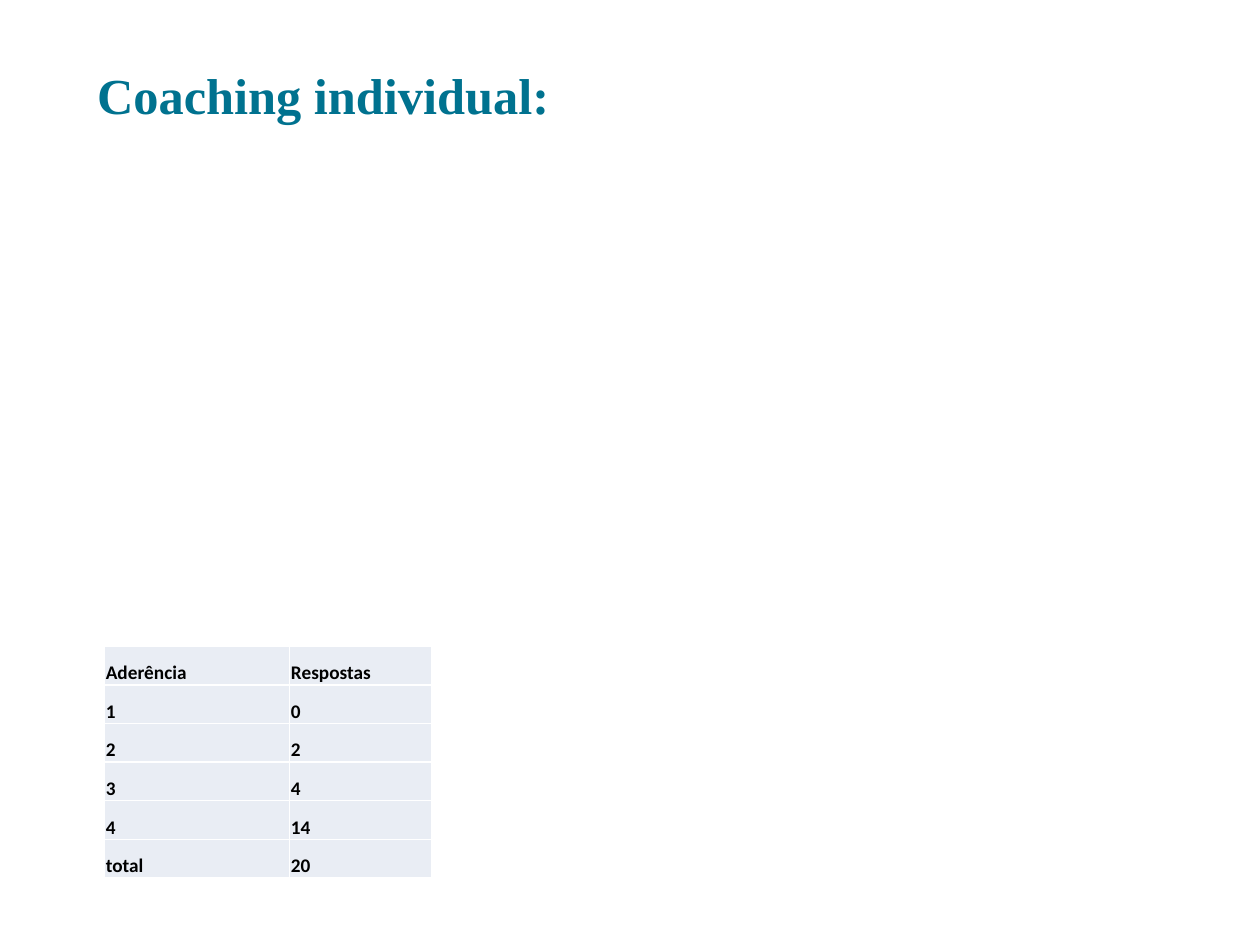
from dataclasses import dataclass

from lxml import etree
from pptx import Presentation
from pptx.dml.color import RGBColor as Color
from pptx.enum.text import MSO_ANCHOR as Anchor, PP_ALIGN as Align
from pptx.oxml import parse_xml
from pptx.oxml.ns import nsdecls, qn
from pptx.util import Inches, Pt


@dataclass(frozen=True)
class Theme:
    title_color: str = "00728F"
    text_color: str = "000000"
    cell_fill: str = "E9EDF4"
    border_color: str = "FFFFFF"
    title_font: str = "Times New Roman"
    table_font: str = "Calibri"
    title_size: float = 28.8
    table_size: float = 11


theme = Theme()


def write_text(frame, text, *, font, size, color, bold=True, align=Align.LEFT):
    para = frame.paragraphs[0]
    para.alignment = align
    span = para.add_run()
    span.text = text
    span.font.name = font
    span.font.size = Pt(size)
    span.font.bold = bold
    span.font.color.rgb = Color.from_string(color)
    return span


def add_borders(cell, color, width):
    properties = cell._tc.get_or_add_tcPr()
    for position, side in enumerate(("lnL", "lnR", "lnT", "lnB")):
        line = etree.Element(qn(f"a:{side}"), w=str(Pt(width)))
        fill = etree.SubElement(line, qn("a:solidFill"))
        etree.SubElement(fill, qn("a:srgbClr"), val=color)
        properties.insert(position, line)


deck = Presentation()
deck.slide_width, deck.slide_height = Inches(10), Inches(7.5)
page = deck.slides.add_slide(deck.slide_layouts[5])
page.background.fill.solid()
page.background.fill.fore_color.rgb = Color.from_string("FFFFFF")

# Title with a soft text shadow
title = page.shapes.title
title.left, title.top = Inches(0.67), Inches(0.52)
title.width, title.height = Inches(8.31), Inches(0.46)
title.text_frame.word_wrap = True
title.text_frame.vertical_anchor = Anchor.MIDDLE
span = write_text(title.text_frame, "Coaching individual:", font=theme.title_font,
                  size=theme.title_size, color=theme.title_color)
shadow = parse_xml(
    f'<a:effectLst {nsdecls("a")}>'
    '<a:outerShdw blurRad="50800" dist="38100" dir="5400000">'
    '<a:srgbClr val="000000"><a:alpha val="40000"/></a:srgbClr>'
    '</a:outerShdw></a:effectLst>')
span.font._element.find(qn("a:solidFill")).addnext(shadow)

# Table of answers by adherence level
answers = [
    ("Aderência", "Respostas"),
    ("1", "0"),
    ("2", "2"),
    ("3", "4"),
    ("4", "14"),
    ("total", "20"),
]
column_widths = [1.47, 1.13]
table = page.shapes.add_table(
    len(answers), len(column_widths), Inches(0.83), Inches(5.13),
    Inches(sum(column_widths)), Inches(1.84)).table
for column, width in zip(table.columns, column_widths):
    column.width = Inches(width)

for row_index, row in enumerate(answers):
    for column_index, text in enumerate(row):
        cell = table.cell(row_index, column_index)
        cell.vertical_anchor = Anchor.BOTTOM
        cell.margin_left = cell.margin_right = cell.margin_top = Inches(0.01)
        cell.margin_bottom = 0
        cell.fill.solid()
        cell.fill.fore_color.rgb = Color.from_string(theme.cell_fill)
        add_borders(cell, theme.border_color, 1)
        write_text(cell.text_frame, text, font=theme.table_font,
                   size=theme.table_size, color=theme.text_color)

deck.save("out.pptx")
